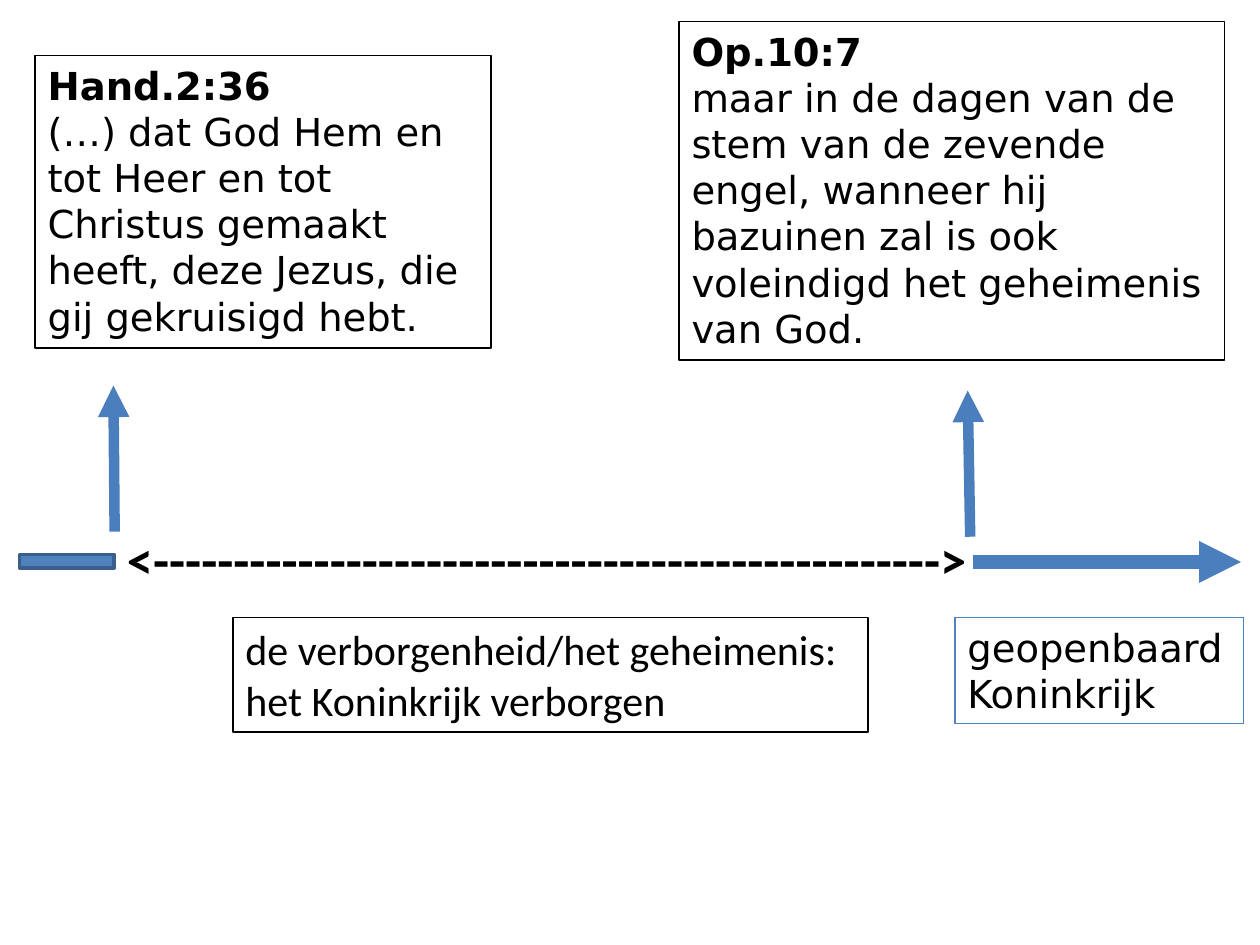
from dataclasses import dataclass

from lxml.etree import SubElement
from pptx import Presentation
from pptx.dml.color import RGBColor
from pptx.enum.shapes import MSO_CONNECTOR, MSO_SHAPE
from pptx.enum.text import MSO_ANCHOR, PP_ALIGN
from pptx.oxml.ns import qn
from pptx.util import Inches, Pt

COLORS = {"ink": "000000", "bar": "4F81BD", "bar_edge": "3A5F8C", "arrow": "4B7EBC"}

# Grid of 100 columns by 75 rows
COLUMNS, ROWS = 100, 75
SLIDE_WIDTH, SLIDE_HEIGHT = Inches(10), Inches(7.5)


@dataclass
class Caption:
    column: float
    row: float
    columns: float
    rows: float
    paragraphs: list[str]
    font: str = "DejaVu Sans"
    size: float = 22
    bold_first: bool = False
    border: str | None = "ink"
    border_width: float = 1


@dataclass
class Arrow:
    start: tuple[float, float]
    end: tuple[float, float]
    width: float


CAPTIONS = [
    # Dashed period of concealment on the timeline
    Caption(9.1, 41.3, 74, 6.1, ["<" + "-" * 49 + ">"],
            font="Calibri", size=30, bold_first=True, border=None),
    # Bible verses above the timeline
    Caption(2.8, 4.4, 36.2, 23.2,
            ["Hand.2:36",
             "(…) dat God Hem en tot Heer en tot Christus gemaakt",
             "heeft, deze Jezus, die gij gekruisigd hebt."],
            bold_first=True),
    Caption(53.9, 1.7, 43.3, 26.9,
            ["Op.10:7",
             "maar in de dagen van de stem van de zevende",
             "engel, wanneer hij bazuinen zal is ook voleindigd het geheimenis van God."],
            bold_first=True),
    # Periods below the timeline
    Caption(18.5, 49, 50.4, 9.1,
            ["de verborgenheid/het geheimenis: het Koninkrijk verborgen"],
            font="Calibri", size=24),
    Caption(75.8, 49, 22.9, 8.4, ["geopenbaard Koninkrijk"],
            border="bar", border_width=0.75),
]

ARROWS = [
    Arrow((9.1, 42.2), (9, 30.6), 6),
    Arrow((77, 42.6), (76.8, 31), 6),
    Arrow((77.2, 44.6), (98.5, 44.6), 8),
]


def x(column: float) -> int:
    return round(SLIDE_WIDTH * column / COLUMNS)


def y(row: float) -> int:
    return round(SLIDE_HEIGHT * row / ROWS)


def color(name: str) -> RGBColor:
    return RGBColor.from_string(COLORS[name])


def draw_caption(slide, caption: Caption) -> None:
    box = slide.shapes.add_textbox(x(caption.column), y(caption.row),
                                   x(caption.columns), y(caption.rows))
    if caption.border:
        box.line.color.rgb = color(caption.border)
        box.line.width = Pt(caption.border_width)
    frame = box.text_frame
    frame.word_wrap = True
    frame.vertical_anchor = MSO_ANCHOR.TOP
    frame.text = "\n".join(caption.paragraphs)
    for index, paragraph in enumerate(frame.paragraphs):
        paragraph.alignment = PP_ALIGN.LEFT
        for run in paragraph.runs:
            run.font.name = caption.font
            run.font.size = Pt(caption.size)
            run.font.bold = caption.bold_first and index == 0
            run.font.color.rgb = color("ink")


def draw_arrow(slide, arrow: Arrow) -> None:
    (start_column, start_row), (end_column, end_row) = arrow.start, arrow.end
    connector = slide.shapes.add_connector(
        MSO_CONNECTOR.STRAIGHT,
        x(start_column), y(start_row), x(end_column), y(end_row))
    connector.line.color.rgb = color("arrow")
    connector.line.width = Pt(arrow.width)
    SubElement(connector.line._get_or_add_ln(), qn("a:tailEnd"), type="triangle")
    SubElement(connector._element.spPr, qn("a:effectLst"))


def draw_past_bar(slide) -> None:
    bar = slide.shapes.add_shape(MSO_SHAPE.MATH_MINUS, x(0.2), y(42.2), x(10.2), y(4.7))
    bar.shadow.inherit = False
    bar.fill.solid()
    bar.fill.fore_color.rgb = color("bar")
    bar.line.color.rgb = color("bar_edge")
    bar.line.width = Pt(2)


def main() -> None:
    presentation = Presentation()
    presentation.slide_width, presentation.slide_height = SLIDE_WIDTH, SLIDE_HEIGHT
    slide = presentation.slides.add_slide(presentation.slide_layouts[6])
    for caption in CAPTIONS:
        draw_caption(slide, caption)
    draw_past_bar(slide)
    for arrow in ARROWS:
        draw_arrow(slide, arrow)
    presentation.save("out.pptx")


if __name__ == "__main__":
    main()
